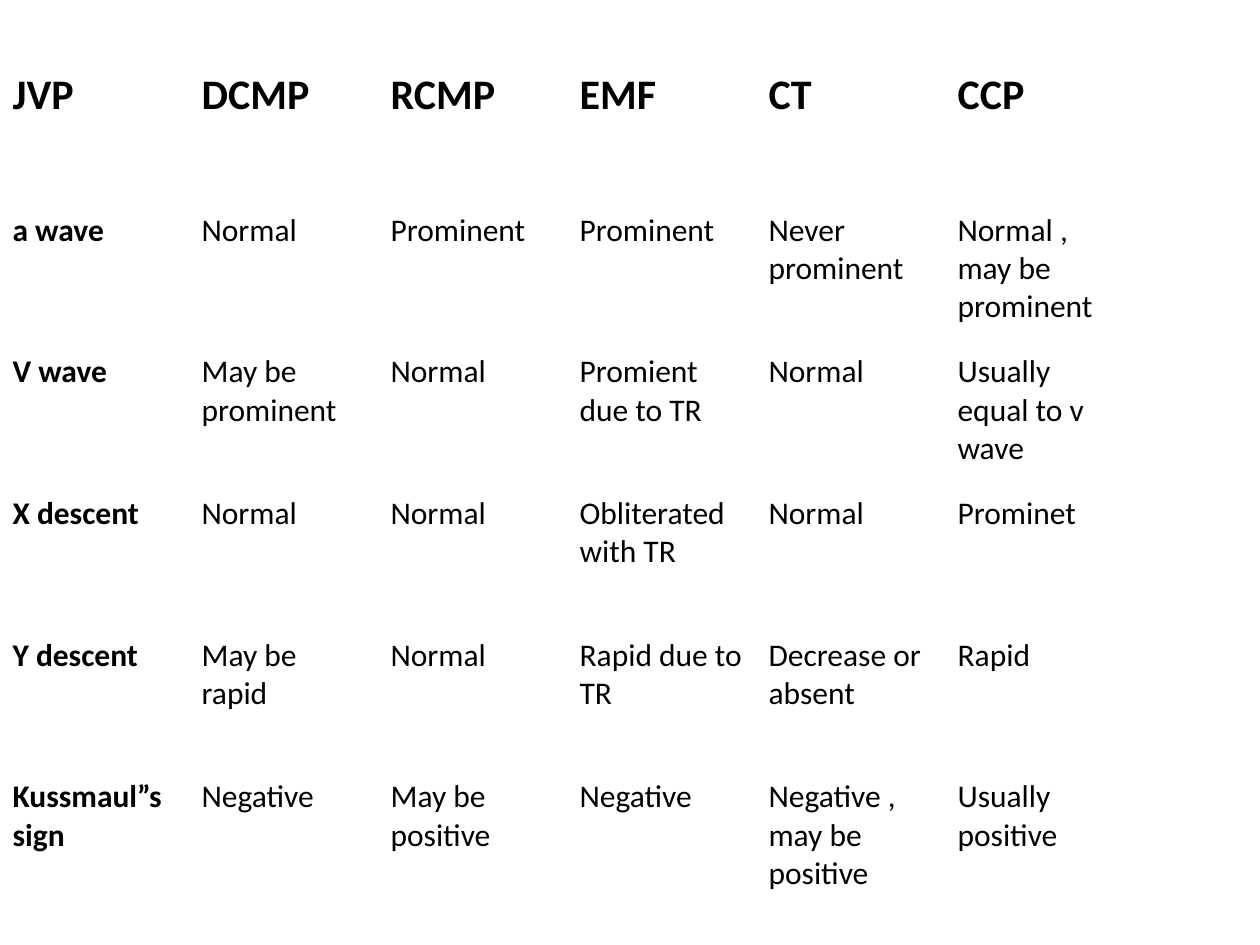
from dataclasses import dataclass

from pptx import Presentation
from pptx.dml.color import RGBColor
from pptx.util import Emu, Pt

EMU_PER_PX = 6350
BLANK_LAYOUT = 6
FONT = "Calibri"
BLACK = "000000"


@dataclass(frozen=True)
class Grid:
    left: int
    top: int
    column_width: int
    row_height: int


@dataclass(frozen=True)
class Finding:
    sign: str
    values: tuple[str, ...]


GRID = Grid(left=0, top=72, column_width=216, row_height=162)
HEADER = Finding("JVP", ("DCMP", "RCMP", "EMF", "CT", "CCP"))
FINDINGS = (
    Finding("a wave", ("Normal", "Prominent", "Prominent", "Never prominent",
                       "Normal , may be prominent")),
    Finding("V wave", ("May be prominent", "Normal", "Promient due to TR", "Normal",
                       "Usually equal to v wave")),
    Finding("X descent", ("Normal", "Normal", "Obliterated with TR", "Normal",
                          "Prominet")),
    Finding("Y descent", ("May be rapid", "Normal", "Rapid due to TR",
                          "Decrease or absent", "Rapid")),
    Finding("Kussmaul”s sign", ("Negative", "May be positive", "Negative",
                                "Negative , may be positive", "Usually positive")),
)


def px(length: int) -> Emu:
    return Emu(length * EMU_PER_PX)


def color(value: str) -> RGBColor:
    return RGBColor.from_string(value)


def write_cell(cell, text: str, size: int, bold: bool) -> None:
    cell.fill.background()
    cell.text_frame.text = text
    font = cell.text_frame.paragraphs[0].runs[0].font
    font.name = FONT
    font.size = Pt(size)
    font.bold = bold
    font.color.rgb = color(BLACK)


def draw_table(page, grid: Grid, header: Finding, findings: tuple[Finding, ...]) -> None:
    rows = (header, *findings)
    column_count = 1 + len(header.values)
    table = page.shapes.add_table(
        len(rows), column_count, px(grid.left), px(grid.top),
        px(grid.column_width * column_count), px(grid.row_height * len(rows)),
    ).table
    table.first_row = False
    table.horz_banding = False
    for row_index, finding in enumerate(rows):
        is_header = row_index == 0
        for column_index, text in enumerate((finding.sign, *finding.values)):
            write_cell(table.cell(row_index, column_index), text,
                       size=24 if is_header else 18,
                       bold=is_header or column_index == 0)


def main() -> None:
    deck = Presentation()
    deck.slide_width = px(1440)
    deck.slide_height = px(1080)
    page = deck.slides.add_slide(deck.slide_layouts[BLANK_LAYOUT])
    draw_table(page, GRID, HEADER, FINDINGS)
    deck.save("out.pptx")


if __name__ == "__main__":
    main()
